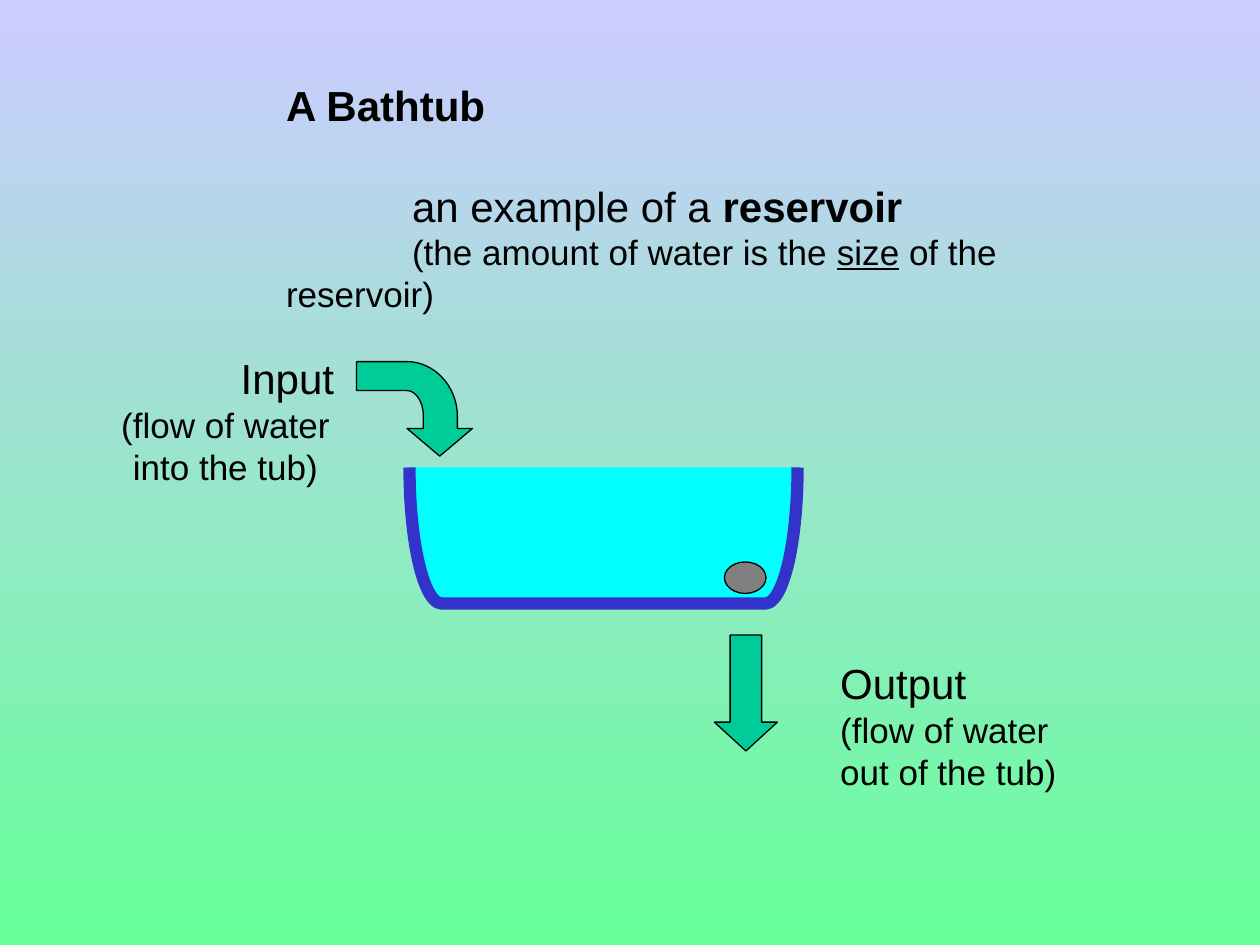
"""Build a slide that explains a reservoir with a bathtub, its input and its output."""

from dataclasses import dataclass

from lxml.etree import SubElement
from pptx import Presentation
from pptx.dml.color import RGBColor
from pptx.enum.shapes import MSO_SHAPE
from pptx.enum.text import MSO_ANCHOR, MSO_AUTO_SIZE, PP_ALIGN
from pptx.oxml.ns import qn
from pptx.util import Inches, Pt

BLACK = "000000"
FLOW_GREEN = "00CC99"
Point = tuple[float, float]


@dataclass(frozen=True)
class Box:
    left: float
    top: float
    width: float
    height: float

    def emu(self) -> tuple:
        return tuple(map(Inches, (self.left, self.top, self.width, self.height)))


@dataclass(frozen=True)
class Part:
    preset: MSO_SHAPE
    box: Box
    fill: str
    line: str = BLACK
    line_width: float = 0.75
    rotation: float = 0
    adjustments: tuple[float, ...] = ()


@dataclass(frozen=True)
class FlowLabel:
    box: Box
    heading: str
    detail: str
    heading_align: PP_ALIGN = PP_ALIGN.LEFT
    detail_align: PP_ALIGN = PP_ALIGN.LEFT


PARTS = (
    Part(MSO_SHAPE.LEFT_BRACKET, Box(4.25, 2.71, 1.08, 3.08), "00FFFF", "3333CC", 7, 270, (0.237,)),
    Part(MSO_SHAPE.DOWN_ARROW, Box(5.67, 5.04, 0.5, 0.92), FLOW_GREEN, adjustments=(0.5, 0.458)),
    Part(MSO_SHAPE.OVAL, Box(5.75, 4.46, 0.33, 0.25), "808080"),
)
LABELS = (
    FlowLabel(Box(0.83, 2.75, 1.92, 1.17), "Input", "(flow of water into the tub)",
              PP_ALIGN.RIGHT, PP_ALIGN.CENTER),
    FlowLabel(Box(6.57, 5.17, 2.27, 1.17), "Output", "(flow of water out of the tub)"),
)


def rgb(color: str) -> RGBColor:
    return RGBColor.from_string(color)


def paint(shape, fill: str, line: str, line_width: float) -> None:
    shape.shadow.inherit = False
    shape.fill.solid()
    shape.fill.fore_color.rgb = rgb(fill)
    shape.line.color.rgb = rgb(line)
    shape.line.width = Pt(line_width)


def draw_part(slide, part: Part) -> None:
    shape = slide.shapes.add_shape(part.preset, *part.box.emu())
    shape.rotation = part.rotation
    for index, value in enumerate(part.adjustments):
        shape.adjustments[index] = value
    paint(shape, part.fill, part.line, part.line_width)


def curve(start: Point, first: Point, second: Point, end: Point, steps: int = 16) -> list[Point]:
    weights = [((1 - t) ** 3, 3 * t * (1 - t) ** 2, 3 * t * t * (1 - t), t ** 3)
               for t in (step / steps for step in range(steps + 1))]
    return [tuple(sum(w * point[axis] for w, point in zip(weight, (start, first, second, end)))
                  for axis in (0, 1)) for weight in weights]


def draw_input_arrow(slide) -> None:
    outer_bend = curve((3.63, 3.3), (3.63, 3.07), (3.45, 2.87), (3.23, 2.87))
    inner_bend = curve((3.23, 3.1), (3.3, 3.1), (3.36, 3.19), (3.36, 3.3))
    outline = [(3.49, 3.62), (3.75, 3.4), (3.63, 3.4), *outer_bend,
               (2.83, 2.87), (2.83, 3.1), *inner_bend, (3.36, 3.4), (3.23, 3.4)]
    corners = [(Inches(x), Inches(y)) for x, y in outline]
    builder = slide.shapes.build_freeform(*corners[0])
    builder.add_line_segments(corners[1:], close=True)
    paint(builder.convert_to_shape(), FLOW_GREEN, BLACK, 0.75)


def style(paragraph, size: float, align: PP_ALIGN = PP_ALIGN.LEFT, bold: bool | None = None) -> None:
    paragraph.alignment = align
    paragraph.space_before = Pt(0)
    paragraph.font.name = "Arial"
    paragraph.font.size = Pt(size)
    paragraph.font.bold = bold
    paragraph.font.color.rgb = rgb(BLACK)


def prepare(shape, box: Box):
    shape.left, shape.top, shape.width, shape.height = box.emu()
    frame = shape.text_frame
    frame.word_wrap = True
    frame.auto_size = MSO_AUTO_SIZE.NONE
    frame.vertical_anchor = MSO_ANCHOR.TOP
    return frame


def write_label(slide, label: FlowLabel) -> None:
    frame = prepare(slide.shapes.add_textbox(*label.box.emu()), label.box)
    heading, detail = frame.paragraphs[0], frame.add_paragraph()
    heading.text, detail.text = label.heading, label.detail
    style(heading, 24, label.heading_align)
    style(detail, 20, label.detail_align)


def indent_first_line(paragraph, indent: float) -> None:
    properties = paragraph._p.get_or_add_pPr()
    properties.set("marL", "0")
    properties.set("indent", str(Inches(indent)))
    SubElement(properties, qn("a:buNone"))


def write_headline(slide) -> None:
    title = prepare(slide.shapes.title, Box(2.17, 0.58, 7.07, 0.5))
    title.text = "A Bathtub"
    style(title.paragraphs[0], 24, bold=True)

    description = prepare(slide.placeholders[1], Box(2.17, 1.38, 7.07, 1.2))
    example, size_note = description.paragraphs[0], description.add_paragraph()
    for paragraph, size in ((example, 24), (size_note, 20)):
        style(paragraph, size)
        indent_first_line(paragraph, 1)
    example.add_run().text = "an example of a "
    reservoir = example.add_run()
    reservoir.text = "reservoir"
    reservoir.font.bold = True
    size_note.add_run().text = "(the amount of water is the "
    size_word = size_note.add_run()
    size_word.text = "size"
    size_word.font.underline = True
    size_note.add_run().text = " of the reservoir)"


def paint_background(slide) -> None:
    fill = slide.background.fill
    fill.gradient()
    fill.gradient_angle = 270
    for stop, color, position in zip(fill.gradient_stops, ("CCCCFF", "66FF99"), (0, 1)):
        stop.color.rgb = rgb(color)
        stop.position = position


def main() -> None:
    presentation = Presentation()
    presentation.slide_width, presentation.slide_height = Inches(10), Inches(7.5)
    slide = presentation.slides.add_slide(presentation.slide_layouts[1])
    paint_background(slide)
    write_headline(slide)
    for part in PARTS:
        draw_part(slide, part)
    draw_input_arrow(slide)
    for label in LABELS:
        write_label(slide, label)
    presentation.save("out.pptx")


if __name__ == "__main__":
    main()
